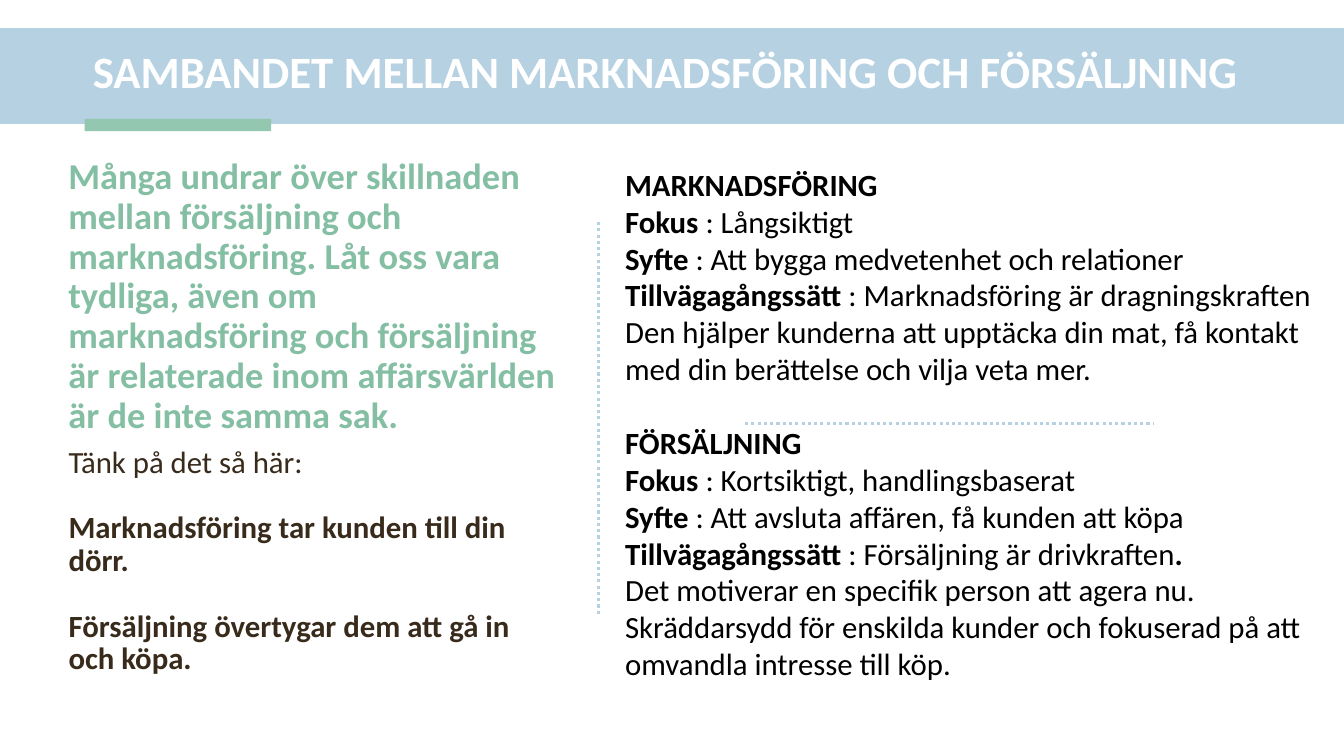
from lxml import etree
from pptx import Presentation
from pptx import util as u
from pptx.dml.color import RGBColor
from pptx.enum import dml, shapes, text
from pptx.oxml import ns


def rgb(value):
    return RGBColor.from_string(value)


class Deck:
    font = "Calibri"
    blue, green, mint = "B6D1E1", "94C7B0", "84BFA4"
    white, brown, black = "FFFFFF", "382B1B", "000000"

    def __init__(self):
        self.prs = Presentation()
        self.prs.slide_width = u.Inches(13.33)
        self.prs.slide_height = u.Inches(7.5)
        self.s = self.prs.slides.add_slide(self.prs.slide_layouts[3])

    def bar(self, box, color, depth):
        sp = self.s.shapes.add_shape(shapes.MSO_SHAPE.RECTANGLE, *map(u.Inches, box))
        sp.shadow.inherit = False
        sp.fill.solid()
        sp.fill.fore_color.rgb = rgb(color)
        sp.line.fill.background()
        sp.element.getparent().insert(depth, sp.element)

    def dotted(self, *ends):
        line = self.s.shapes.add_connector(
            shapes.MSO_CONNECTOR.STRAIGHT, *map(u.Inches, ends))
        line.line.color.rgb = rgb(self.blue)
        line.line.width = u.Pt(2.25)
        line.line.dash_style = dml.MSO_LINE.ROUND_DOT
        etree.SubElement(line.element.spPr, ns.qn("a:effectLst"))

    def textbox(self, box):
        return self.s.shapes.add_textbox(*map(u.Inches, box))

    def fill_text(self, sp, box, paragraphs, size, color, spacing=1.0, gap=0,
                  gaps=(), anchor=text.MSO_ANCHOR.TOP, inset=0.05):
        sp.left, sp.top, sp.width, sp.height = map(u.Inches, box)
        tf = sp.text_frame
        tf.word_wrap = True
        tf.auto_size = text.MSO_AUTO_SIZE.NONE
        tf.vertical_anchor = anchor
        tf.margin_top = u.Inches(inset)
        for i, runs in enumerate(paragraphs):
            p = tf.add_paragraph() if i else tf.paragraphs[0]
            pPr = p._p.get_or_add_pPr()
            pPr.set("marL", "0")
            pPr.set("indent", "0")
            etree.SubElement(pPr, ns.qn("a:buNone"))
            p.alignment = text.PP_ALIGN.LEFT
            p.line_spacing = spacing
            p.space_before = u.Pt(gap if i in gaps else 0)
            for words, bold in runs:
                if words == "\v":
                    p.add_line_break()
                    continue
                r = p.add_run()
                r.text = words
                r.font.name = self.font
                r.font.size = u.Pt(size)
                r.font.bold = bold
                r.font.color.rgb = rgb(color)


def labelled(label, words):
    return [(label + " ", True), (": " + words, False)]


def main():
    d = Deck()
    title, left, right = d.s.placeholders

    d.bar((0, 0.28, 13.33, 0.95), d.blue, 2)
    d.bar((0.84, 1.18, 1.85, 0.12), d.green, 3)

    d.fill_text(title, (0.82, 0.34, 11.93, 0.79),
                [[("SAMBANDET MELLAN MARKNADSFÖRING OCH FÖRSÄLJNING", True)]],
                32, d.white, 0.9, anchor=text.MSO_ANCHOR.MIDDLE)

    d.fill_text(left, (0.58, 4.38, 5.08, 2.99), [
        [("Tänk på det så här:", False)],
        [("Marknadsföring tar kunden till din dörr.", True)],
        [("Försäljning övertygar dem att gå in och köpa.", True)],
    ], 22, d.brown, u.Pt(23.4), gap=23.4, gaps=(1, 2))

    intro = (0.58, 1.51, 5.09, 1.34)
    d.fill_text(d.textbox(intro), intro, [[(
        "Många undrar över skillnaden mellan försäljning och marknadsföring. "
        "Låt oss vara tydliga, även om marknadsföring och försäljning är "
        "relaterade inom affärsvärlden är de inte samma sak.", True)]],
        26, d.mint, u.Pt(28.4))

    d.fill_text(right, (6.1, 1.49, 7.04, 6.06), [
        [("MARKNADSFÖRING", True)],
        labelled("Fokus", "Långsiktigt"),
        labelled("Syfte", "Att bygga medvetenhet och relationer"),
        labelled("Tillvägagångssätt",
                 "Marknadsföring är dragningskraften Den hjälper kunderna att "
                 "upptäcka din mat, få kontakt med din berättelse och vilja veta mer."),
        [("FÖRSÄLJNING", True)],
        labelled("Fokus", "Kortsiktigt, handlingsbaserat"),
        labelled("Syfte", "Att avsluta affären, få kunden att köpa"),
        labelled("Tillvägagångssätt", "Försäljning är drivkraften")
        + [(".", True), ("\v", False),
           ("Det motiverar en specifik person att agera nu.", False)],
        [("Skräddarsydd för enskilda kunder och fokuserad på att "
          "omvandla intresse till köp.", False)],
    ], 22, d.black, gap=26, gaps=(4,), inset=0.15)

    d.dotted(5.94, 6.09, 5.94, 2.19)
    d.dotted(7.39, 4.2, 11.45, 4.2)
    d.prs.save("out.pptx")


if __name__ == "__main__":
    main()
